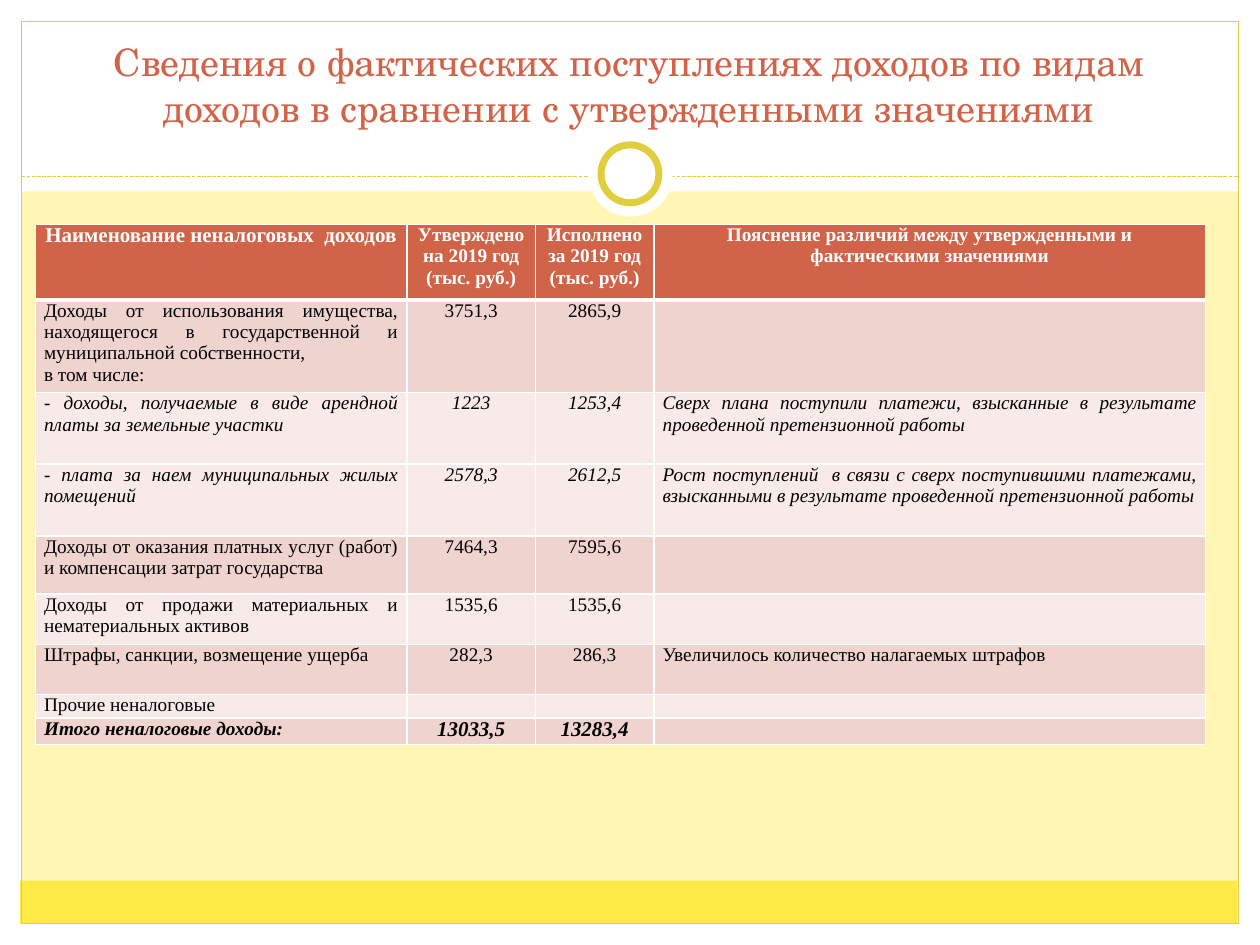
from lxml.etree import SubElement
from pptx import Presentation
from pptx.dml.color import RGBColor
from pptx.enum.dml import MSO_LINE
from pptx.enum.shapes import MSO_CONNECTOR, MSO_SHAPE
from pptx.enum.text import MSO_ANCHOR, PP_ALIGN
from pptx.oxml.ns import qn
from pptx.util import Inches, Pt

WHITE, GOLD, RUST = "FFFFFF", "E1CE3F", "D16349"
DARK, LIGHT = "EED3CF", "F7EAE9"
COLS = [2.95, 1.02, 0.94, 4.38]
HEADER = [
    "Наименование неналоговых  доходов",
    "Утверждено на 2019 год\n(тыс. руб.)",
    "Исполнено за 2019 год\n(тыс. руб.)",
    "Пояснение различий между утвержденными и фактическими значениями",
]
ROWS = [
    (0.4, DARK, "", ["Доходы от использования имущества, находящегося в государственной "
                     "и муниципальной собственности,\nв том числе:", "3751,3", "2865,9", ""]),
    (0.57, LIGHT, "i", ["- доходы, получаемые в виде арендной платы за земельные участки",
                        "1223", "1253,4",
                        "Сверх плана поступили платежи, взысканные в результате "
                        "проведенной претензионной работы"]),
    (0.57, LIGHT, "i", ["- плата за наем муниципальных жилых помещений", "2578,3", "2612,5",
                        "Рост поступлений  в связи с сверх поступившими платежами, "
                        "взысканными в результате проведенной претензионной работы"]),
    (0.46, DARK, "", ["Доходы от оказания платных услуг (работ) и компенсации затрат "
                      "государства", "7464,3", "7595,6", ""]),
    (0.4, LIGHT, "", ["Доходы от продажи материальных и нематериальных активов",
                      "1535,6", "1535,6", ""]),
    (0.4, DARK, "", ["Штрафы, санкции, возмещение ущерба", "282,3", "286,3",
                     "Увеличилось количество налагаемых штрафов"]),
    (0.18, LIGHT, "", ["Прочие неналоговые", "", "", ""]),
    (0.21, DARK, "bi", ["Итого неналоговые доходы:", "13033,5", "13283,4", ""]),
]


def rgb(color):
    return RGBColor.from_string(color)


def paint(target, color):
    target.fill.solid()
    target.fill.fore_color.rgb = rgb(color)


def add_shape(slide, kind, box, fill=None, line=None, width=0.75):
    sp = slide.shapes.add_shape(kind, *map(Inches, box))
    sp.shadow.inherit = False
    if fill:
        paint(sp, fill)
    else:
        sp.fill.background()
    if line:
        sp.line.color.rgb = rgb(line)
        sp.line.width = Pt(width)
    else:
        sp.line.fill.background()


def add_dashed_line(slide, x1, x2, y):
    line = slide.shapes.add_connector(
        MSO_CONNECTOR.STRAIGHT, Inches(x1), Inches(y), Inches(x2), Inches(y))
    line.line.color.rgb = rgb(GOLD)
    line.line.width = Pt(0.75)
    line.line.dash_style = MSO_LINE.SQUARE_DOT
    SubElement(line._element.spPr, qn("a:effectLst"))


def set_font(p, name, size, color, bold=False, italic=False):
    p.font.name = name
    p.font.size = Pt(size)
    p.font.color.rgb = rgb(color)
    p.font.bold = bold
    p.font.italic = italic


def add_title(slide, text):
    box = slide.shapes.add_textbox(*map(Inches, (0.33, 0.25, 9.33, 0.83)))
    tf = box.text_frame
    tf.word_wrap = True
    tf.vertical_anchor = MSO_ANCHOR.BOTTOM
    p = tf.paragraphs[0]
    p.text = text
    p.alignment = PP_ALIGN.CENTER
    set_font(p, "TeX Gyre Schola", 21.6, RUST)


def set_borders(cell, top, bottom):
    tc_pr = cell._tc.get_or_add_tcPr()
    widths = {"lnL": 1, "lnR": 1, "lnT": top, "lnB": bottom}
    for i, (side, width) in enumerate(widths.items()):
        ln = SubElement(tc_pr, qn(f"a:{side}"), w=str(Pt(width)))
        SubElement(SubElement(ln, qn("a:solidFill")), qn("a:srgbClr"), val=WHITE)
        tc_pr.insert(i, ln)


def fill_cell(cell, text, fill, align, size, color, bold, italic):
    cell.margin_left = cell.margin_right = Inches(0.07)
    cell.margin_top = cell.margin_bottom = 0
    paint(cell, fill)
    cell.text = text
    for p in cell.text_frame.paragraphs:
        p.alignment = align
        set_font(p, "Times New Roman", size, color, bold, italic)
        if not text:
            SubElement(p._p, qn("a:endParaRPr"), sz=str(size * 100))


def add_income_table(slide):
    heights = [0.6] + [row[0] for row in ROWS]
    table = slide.shapes.add_table(
        len(heights), len(COLS), Inches(0.28), Inches(1.78),
        Inches(sum(COLS)), Inches(sum(heights))).table
    table.first_row = table.horz_banding = False
    for col, width in zip(table.columns, COLS):
        col.width = Inches(width)
    for row, height in zip(table.rows, heights):
        row.height = Inches(height)
    for c, text in enumerate(HEADER):
        cell = table.cell(0, c)
        fill_cell(cell, text, RUST, PP_ALIGN.CENTER, 11 if c else 12, WHITE, True, False)
        set_borders(cell, 1, 3)
    for r, (_, fill, style, texts) in enumerate(ROWS, 1):
        for c, text in enumerate(texts):
            number = c in (1, 2)
            cell = table.cell(r, c)
            fill_cell(cell, text, fill, PP_ALIGN.CENTER if number else PP_ALIGN.JUSTIFY,
                      12 if number and "b" in style else 11, "000000",
                      "b" in style, "i" in style)
            set_borders(cell, 3 if r == 1 else 1, 1)


def add_frame(slide):
    for box in ((0, 7.33, 10, 0.17), (0, 0, 10, 1.52),
                (0, 0, 0.17, 7.5), (9.83, 0, 0.17, 7.5)):
        add_shape(slide, MSO_SHAPE.RECTANGLE, box, WHITE)
    add_shape(slide, MSO_SHAPE.RECTANGLE, (0.16, 6.99, 9.66, 0.34), "FFE947")
    add_shape(slide, MSO_SHAPE.RECTANGLE, (0.17, 0.17, 9.66, 7.16), line=GOLD)
    add_dashed_line(slide, 0.17, 9.83, 1.4)
    add_shape(slide, MSO_SHAPE.OVAL, (4.67, 1.05, 0.67, 0.67), WHITE)
    add_shape(slide, MSO_SHAPE.OVAL, (4.77, 1.15, 0.46, 0.46), WHITE, GOLD, 4)


def main():
    prs = Presentation()
    prs.slide_width, prs.slide_height = Inches(10), Inches(7.5)
    slide = prs.slides.add_slide(prs.slide_layouts[6])
    paint(slide.background, "FFF6B5")
    add_frame(slide)
    add_title(slide, "Сведения о фактических поступлениях доходов по видам доходов "
                     "в сравнении с утвержденными значениями")
    add_income_table(slide)
    prs.save("out.pptx")


if __name__ == "__main__":
    main()
